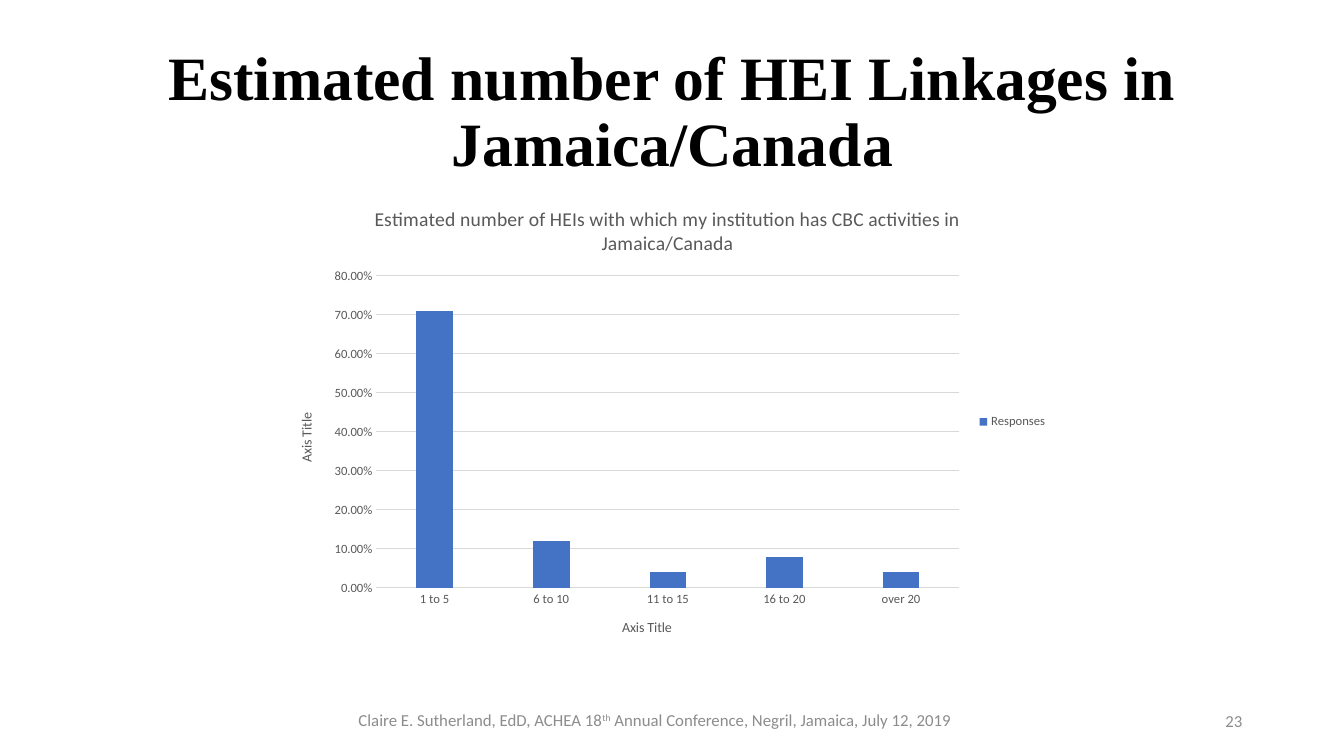
from dataclasses import dataclass

from lxml.etree import SubElement
from pptx import Presentation
from pptx.chart.data import CategoryChartData
from pptx.dml.color import RGBColor
from pptx.enum.chart import XL_CHART_TYPE as ChartType
from pptx.enum.chart import XL_LEGEND_POSITION as LegendPosition
from pptx.enum.chart import XL_TICK_MARK as TickMark
from pptx.enum.text import MSO_ANCHOR as Anchor
from pptx.enum.text import PP_ALIGN as Align
from pptx.oxml.ns import qn
from pptx.util import Inches, Pt


@dataclass(frozen=True)
class Theme:
    heading_font: str = "Times New Roman"
    body_font: str = "Calibri"
    heading: str = "000000"
    chart_text: str = "595959"
    footer: str = "8C8C8C"
    rule: str = "D9D9D9"
    bar: str = "4472C4"
    heading_size: float = 44
    chart_title_size: float = 14
    footer_size: float = 12
    axis_title_size: float = 10
    label_size: float = 9
    rule_width: float = 0.75


THEME = Theme()
RESPONSES = {"1 to 5": 0.71, "6 to 10": 0.12, "11 to 15": 0.04,
             "16 to 20": 0.08, "over 20": 0.04}


def style(font, size, color, name=THEME.body_font, bold=False):
    font.name, font.size, font.bold = name, Pt(size), bold
    font.color.rgb = RGBColor.from_string(color)


def add_line(slide, box, align):
    """Add a vertically centred text box and return its paragraph."""
    frame = slide.shapes.add_textbox(*map(Inches, box)).text_frame
    frame.word_wrap = True
    frame.vertical_anchor = Anchor.MIDDLE
    paragraph = frame.paragraphs[0]
    paragraph.alignment = align
    return paragraph


def add_heading(slide, box):
    heading = add_line(slide, box, Align.CENTER)
    heading.text = "Estimated number of HEI Linkages in Jamaica/Canada"
    heading.line_spacing = 0.9
    style(heading.font, THEME.heading_size, THEME.heading,
          THEME.heading_font, bold=True)


def add_footer(slide, box):
    left, top, width, height = box
    # Conference line with a raised ordinal
    conference = add_line(slide, box, Align.CENTER)
    style(conference.font, THEME.footer_size, THEME.footer)
    conference.add_run().text = "Claire E. Sutherland, EdD, ACHEA 18"
    ordinal = conference.add_run()
    ordinal.text = "th"
    ordinal._r.get_or_add_rPr().set("baseline", "30000")
    conference.add_run().text = (
        " Annual Conference, Negril, Jamaica, July 12, 2019")
    # Page number
    number_box = (left + 8.12, top + 0.01, 3, height)
    number = add_line(slide, number_box, Align.RIGHT)
    number.text = "23"
    style(number.font, THEME.footer_size, THEME.footer)


def set_title(titled, text, size):
    paragraph = titled.text_frame.paragraphs[0]
    paragraph.text = text
    style(paragraph.font, size, THEME.chart_text)


def set_rule(line):
    line.color.rgb = RGBColor.from_string(THEME.rule)
    line.width = Pt(THEME.rule_width)


def set_plot_area(chart, **fractions):
    """Fix the inner plot area as fractions of the chart's box."""
    plot_area = chart._chartSpace.chart.plotArea
    layout = plot_area.find(qn("c:layout"))
    if layout is None:
        layout = SubElement(plot_area, qn("c:layout"))
        plot_area.insert(0, layout)
    manual = SubElement(layout, qn("c:manualLayout"))
    settings = {"layoutTarget": "inner", "xMode": "edge", "yMode": "edge",
                **fractions}
    for tag, value in settings.items():
        SubElement(manual, qn(f"c:{tag}")).set("val", str(value))


def add_linkages_chart(slide, box):
    data = CategoryChartData(number_format="0.00%")
    data.categories = list(RESPONSES)
    data.add_series("Responses", list(RESPONSES.values()))
    chart = slide.shapes.add_chart(
        ChartType.COLUMN_CLUSTERED, *map(Inches, box), data).chart
    style(chart.font, THEME.axis_title_size, THEME.heading)
    set_title(chart.chart_title,
              "Estimated number of HEIs with which my institution has "
              "CBC activities in Jamaica/Canada", THEME.chart_title_size)
    chart.chart_title.include_in_layout = False
    set_plot_area(chart, x=0.127, y=0.19, w=0.747, h=0.663)

    # Bars
    plot = chart.plots[0]
    plot.gap_width, plot.overlap = 219, -27
    plot.vary_by_categories = False
    bars = plot.series[0]
    bars.format.fill.solid()
    bars.format.fill.fore_color.rgb = RGBColor.from_string(THEME.bar)

    # Axes
    for axis in (chart.category_axis, chart.value_axis):
        set_title(axis.axis_title, "Axis Title", THEME.axis_title_size)
        style(axis.tick_labels.font, THEME.label_size, THEME.chart_text)
        axis.major_tick_mark = axis.minor_tick_mark = TickMark.NONE
    set_rule(chart.category_axis.format.line)
    percent = chart.value_axis
    percent.minimum_scale, percent.maximum_scale = 0, 0.8
    percent.major_unit = 0.1
    percent.tick_labels.number_format = "0.00%"
    percent.tick_labels.number_format_is_linked = False
    percent.format.line.fill.background()
    set_rule(percent.major_gridlines.format.line)

    # Legend
    chart.has_legend = True
    chart.legend.position = LegendPosition.RIGHT
    chart.legend.include_in_layout = False
    style(chart.legend.font, THEME.label_size, THEME.chart_text)


def main():
    deck = Presentation()
    deck.slide_width, deck.slide_height = Inches(13.33), Inches(7.5)
    slide = deck.slides.add_slide(deck.slide_layouts[6])
    add_heading(slide, (0.92, 0.4, 11.5, 1.45))
    add_linkages_chart(slide, (2.75, 1.85, 7.74, 4.67))
    add_footer(slide, (1.3, 6.94, 10.39, 0.4))
    deck.save("out.pptx")


if __name__ == "__main__":
    main()
